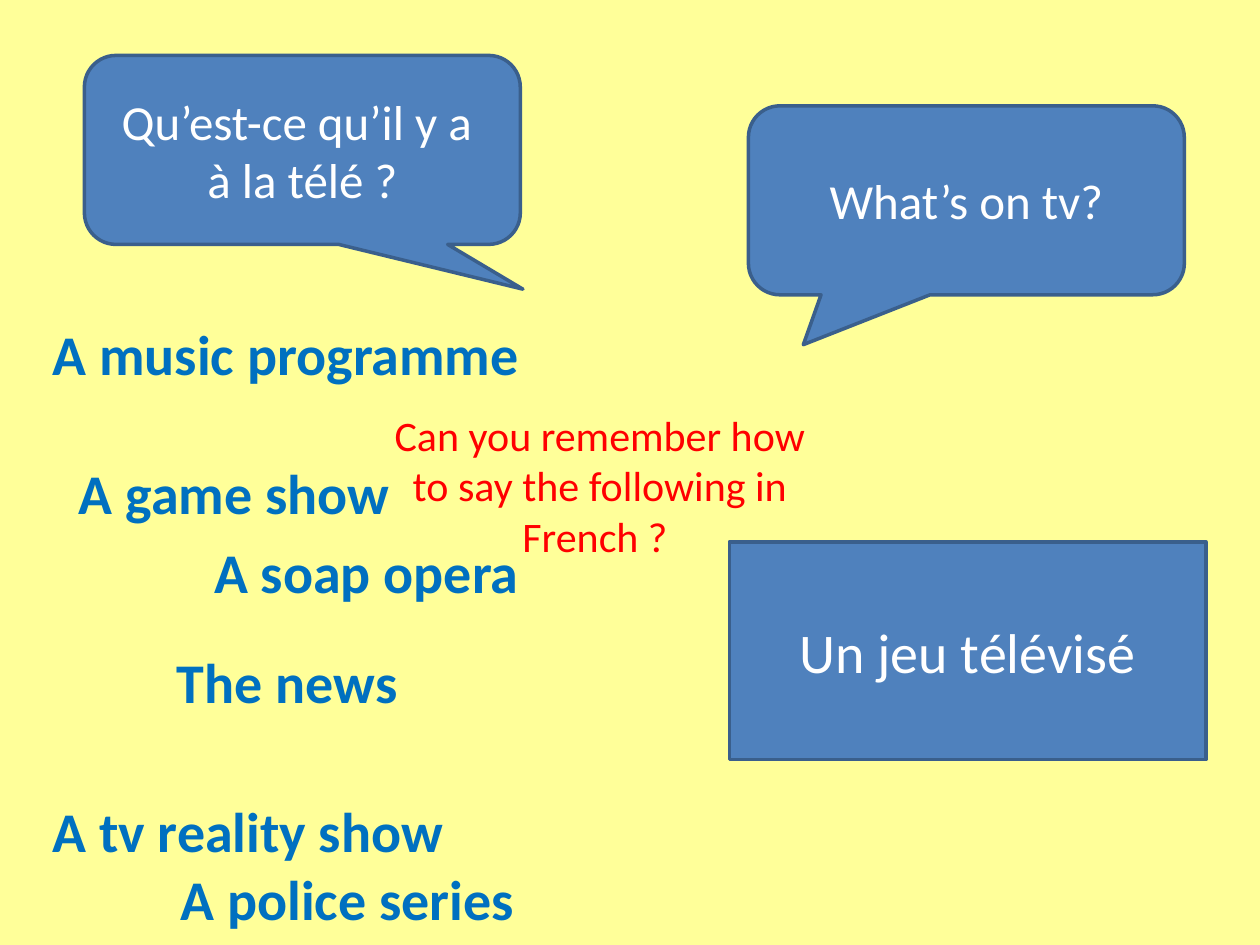
from pptx import Presentation
from pptx.dml.color import RGBColor
from pptx.enum.shapes import MSO_SHAPE
from pptx.enum.text import MSO_ANCHOR, PP_ALIGN
from pptx.util import Inches, Pt

CALLOUT = MSO_SHAPE.ROUNDED_RECTANGULAR_CALLOUT
RECTANGLE = MSO_SHAPE.RECTANGLE
MIDDLE, TOP = MSO_ANCHOR.MIDDLE, MSO_ANCHOR.TOP
CENTER = PP_ALIGN.CENTER

WIDTH, HEIGHT = Inches(10), Inches(7.5)
COLUMN, ROW = WIDTH / 100, HEIGHT / 75
FONT = "Calibri"
COLORS = {
    "background": "FFFF99",
    "panel": "4F81BD",
    "outline": "3A5F8C",
    "light": "FFFFFF",
    "prompt": "FF0000",
    "programme": "0070C0",
}

SPEECH_BUBBLES = [
    (["Qu’est-ce qu’il y a ", "à la télé ?"], (6.7, 4.4, 34.6, 15), (0.506, 0.737, 0.167)),
    (["What’s on tv?"], (59.4, 8.4, 34.6, 15), (-0.374, 0.764, 0.167)),
]
PROGRAMMES = [
    ("A music programme", (2.8, 24.9, 39.8, 6.4)),
    ("The news", (4.3, 50.9, 37, 6.4)),
    ("A soap opera", (10.6, 42.2, 37, 6.4)),
    ("A tv reality show", (1.2, 62.7, 37, 6.4)),
    ("A police series", (9.1, 68.1, 37, 6.4)),
    (" A game show", (-0.4, 35.9, 37, 6.4)),
]


def color(name):
    """Return the named palette colour."""
    return RGBColor.from_string(COLORS[name])


def place(box):
    """Turn left, top, width and height in grid cells into lengths."""
    left, top, width, height = box
    return round(left * COLUMN), round(top * ROW), round(width * COLUMN), round(height * ROW)


def write(frame, lines, *, size, ink, bold=False, anchor=TOP):
    """Write centred lines, one paragraph each, into a text frame."""
    frame.word_wrap = True
    frame.vertical_anchor = anchor
    for index, line in enumerate(lines):
        paragraph = frame.add_paragraph() if index else frame.paragraphs[0]
        paragraph.alignment = CENTER
        run = paragraph.add_run()
        run.text = line
        run.font.name = FONT
        run.font.size = Pt(size)
        run.font.bold = bold
        run.font.color.rgb = color(ink)


def add_panel(slide, kind, lines, box, size, adjustments=()):
    """Add an outlined blue panel with light text in the given box."""
    panel = slide.shapes.add_shape(kind, *place(box))
    panel.shadow.inherit = False
    panel.fill.solid()
    panel.fill.fore_color.rgb = color("panel")
    panel.line.color.rgb = color("outline")
    panel.line.width = Pt(2)
    for index, value in enumerate(adjustments):
        panel.adjustments[index] = value
    write(panel.text_frame, lines, size=size, ink="light", anchor=MIDDLE)


def add_label(slide, text, box, **text_format):
    """Add free-standing text in the given box."""
    label = slide.shapes.add_textbox(*place(box))
    write(label.text_frame, [text], **text_format)


def build_television_slide(prs):
    """Build the slide that practises television programmes."""
    slide = prs.slides.add_slide(prs.slide_layouts[6])
    slide.background.fill.solid()
    slide.background.fill.fore_color.rgb = color("background")
    for lines, box, tail in SPEECH_BUBBLES:
        add_panel(slide, CALLOUT, lines, box, 28, tail)
    add_label(slide, "Can you remember how to say the following in French ? ",
              (28.7, 32, 37.8, 13.1), size=24, ink="prompt")
    for programme, box in PROGRAMMES:
        add_label(slide, programme, box, size=32, ink="programme", bold=True)
    add_panel(slide, RECTANGLE, ["Un jeu télévisé"], (57.9, 43, 37.8, 17.3), 32)


def main():
    """Create and save the presentation."""
    prs = Presentation()
    prs.slide_width, prs.slide_height = WIDTH, HEIGHT
    build_television_slide(prs)
    prs.save("out.pptx")


if __name__ == "__main__":
    main()
